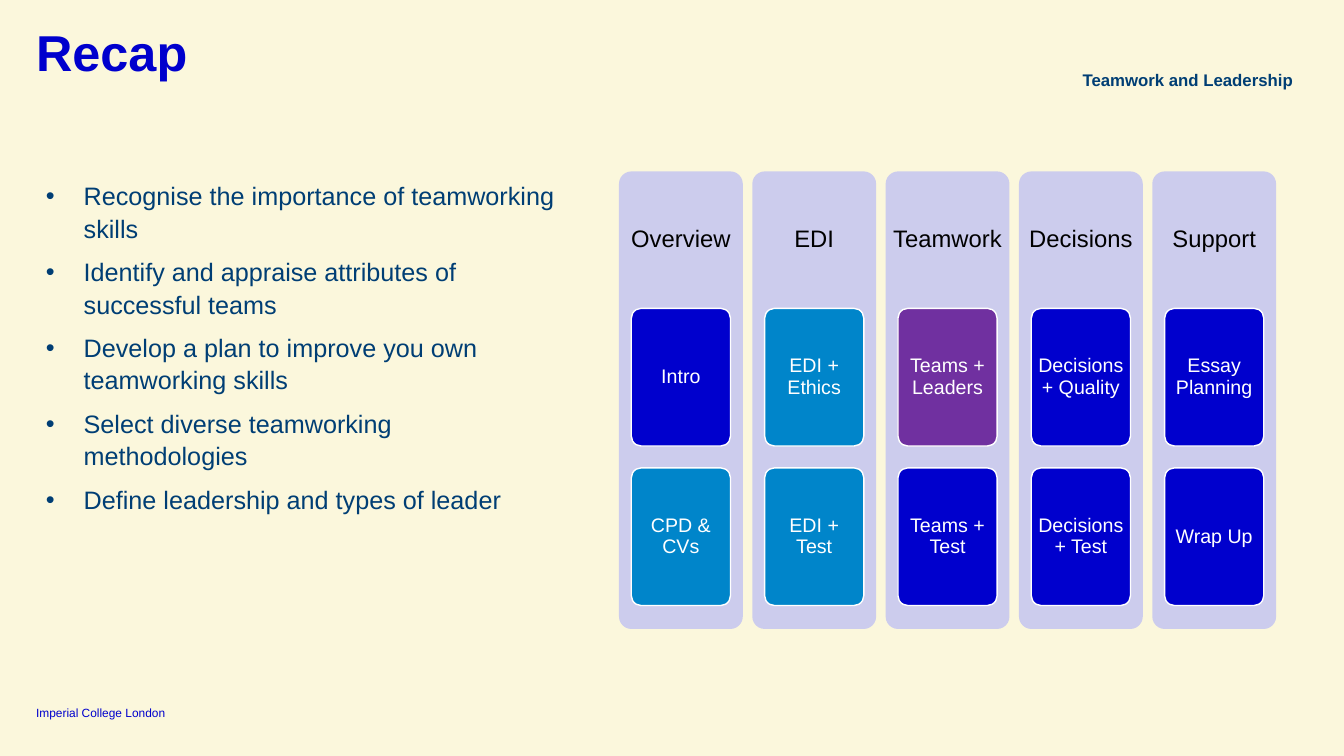
"""Build the Recap slide: learning outcomes beside a five-column course plan."""
from lxml.etree import SubElement
from pptx import Presentation
from pptx.dml.color import RGBColor
from pptx.enum.shapes import MSO_SHAPE
from pptx.enum.text import MSO_ANCHOR, PP_ALIGN
from pptx.oxml.ns import qn
from pptx.util import Cm, Pt

CREAM = RGBColor(0xFB, 0xF7, 0xDC)
BLUE = RGBColor(0x00, 0x00, 0xCD)
NAVY = RGBColor(0x00, 0x3E, 0x74)
LAVENDER = RGBColor(0xCC, 0xCC, 0xED)
SKY = RGBColor(0x00, 0x85, 0xCA)
PURPLE = RGBColor(0x70, 0x30, 0xA0)
BLACK = RGBColor(0x00, 0x00, 0x00)
WHITE = RGBColor(0xFF, 0xFF, 0xFF)

OUTCOMES = [
    "Recognise the importance of teamworking skills",
    "Identify and appraise attributes of successful teams",
    "Develop a plan to improve you own teamworking skills",
    "Select diverse teamworking methodologies",
    "Define leadership and types of leader",
]
COURSE_PLAN = [
    ("Overview", [("Intro", BLUE), ("CPD & CVs", SKY)]),
    ("EDI", [("EDI + Ethics", SKY), ("EDI + Test", SKY)]),
    ("Teamwork", [("Teams + Leaders", PURPLE), ("Teams + Test", BLUE)]),
    ("Decisions", [("Decisions + Quality", BLUE), ("Decisions + Test", BLUE)]),
    ("Support", [("Essay Planning", BLUE), ("Wrap Up", BLUE)]),
]
COLUMN_LEFT, COLUMN_TOP, COLUMN_PITCH = 15.6, 4.32, 3.36
COLUMN_WIDTH, COLUMN_HEIGHT, HEADING_HEIGHT = 3.12, 11.53, 3.46
TILE_TOP, TILE_PITCH, TILE_WIDTH, TILE_HEIGHT = 7.77, 4.02, 2.5, 3.47
TILE_INDENT = (COLUMN_WIDTH - TILE_WIDTH) / 2


def write_text(shape, text, size, color, align=PP_ALIGN.LEFT, anchor=MSO_ANCHOR.TOP,
               spacing=0.9, margin=0, bold=False):
    """Fill a shape with one formatted paragraph per line of text."""
    frame = shape.text_frame
    frame.text = text
    frame.word_wrap = True
    frame.vertical_anchor = anchor
    frame.margin_left = frame.margin_right = Cm(margin)
    frame.margin_top = frame.margin_bottom = Cm(margin)
    for paragraph in frame.paragraphs:
        paragraph.alignment = align
        paragraph.line_spacing = spacing
        for run in paragraph.runs:
            run.font.name = "Arial"
            run.font.size = Pt(size)
            run.font.bold = bold
            run.font.color.rgb = color


def add_panel(left, top, width, height, color):
    """Add a filled rounded rectangle without outline or shadow."""
    panel = slide.shapes.add_shape(
        MSO_SHAPE.ROUNDED_RECTANGLE, Cm(left), Cm(top), Cm(width), Cm(height))
    panel.adjustments[0] = 0.1
    panel.shadow.inherit = False
    panel.fill.solid()
    panel.fill.fore_color.rgb = color
    panel.line.fill.background()
    return panel


presentation = Presentation()
presentation.slide_width = Cm(33.87)
presentation.slide_height = Cm(19.05)
slide = presentation.slides.add_slide(presentation.slide_layouts[6])
slide.background.fill.solid()
slide.background.fill.fore_color.rgb = CREAM

footer = slide.shapes.add_textbox(Cm(0.91), Cm(17.75), Cm(3.94), Cm(0.38))
write_text(footer, "Imperial College London", 8.5, BLUE, anchor=MSO_ANCHOR.BOTTOM, spacing=1)

title = slide.shapes.add_textbox(Cm(0.91), Cm(0.71), Cm(32.05), Cm(1.04))
write_text(title, "Recap", 36, BLUE, bold=True)

outcomes = slide.shapes.add_textbox(Cm(0.91), Cm(4.37), Cm(13.49), Cm(8.74))
write_text(outcomes, "\n".join(OUTCOMES), 18, NAVY, spacing=1.07)
outcomes.text_frame.margin_left = outcomes.text_frame.margin_right = Cm(0.25)
outcomes.text_frame.margin_top = outcomes.text_frame.margin_bottom = Cm(0.13)
for paragraph in outcomes.text_frame.paragraphs:
    paragraph.space_after = Pt(8)
    properties = paragraph._p.get_or_add_pPr()
    properties.set("marL", str(Cm(0.95)))
    properties.set("indent", str(-Cm(0.95)))
    SubElement(properties, qn("a:buFont"), typeface="Arial")
    SubElement(properties, qn("a:buChar"), char="•")
    tabs = SubElement(properties, qn("a:tabLst"))
    SubElement(tabs, qn("a:tab"), pos=str(Cm(1.27)), algn="l")

for column, (heading, sessions) in enumerate(COURSE_PLAN):
    left = COLUMN_LEFT + column * COLUMN_PITCH
    add_panel(left, COLUMN_TOP, COLUMN_WIDTH, COLUMN_HEIGHT, LAVENDER)
    label = slide.shapes.add_textbox(
        Cm(left), Cm(COLUMN_TOP), Cm(COLUMN_WIDTH), Cm(HEADING_HEIGHT))
    write_text(label, heading, 17, BLACK, PP_ALIGN.CENTER, MSO_ANCHOR.MIDDLE, margin=0.1)
    for row, (session, color) in enumerate(sessions):
        tile = add_panel(left + TILE_INDENT, TILE_TOP + row * TILE_PITCH,
                         TILE_WIDTH, TILE_HEIGHT, color)
        tile.line.color.rgb = WHITE
        tile.line.width = Pt(1)
        write_text(tile, session, 14, WHITE, PP_ALIGN.CENTER, MSO_ANCHOR.MIDDLE, margin=0.05)

module = slide.shapes.add_textbox(Cm(23.9), Cm(1.73), Cm(8.69), Cm(0.86))
write_text(module, "Teamwork and Leadership", 12, NAVY, PP_ALIGN.RIGHT, spacing=1.05, bold=True)

presentation.save("out.pptx")
